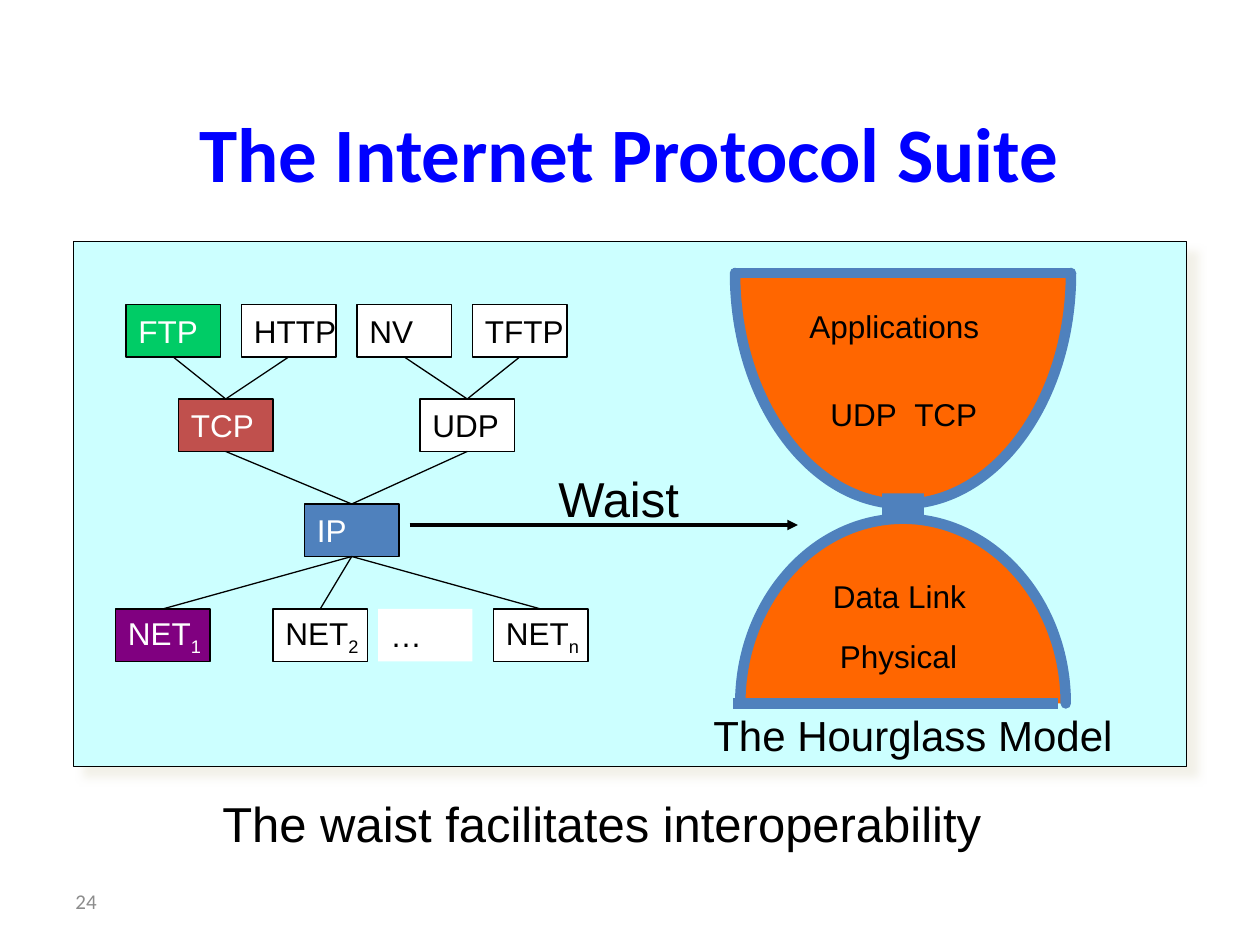
from copy import deepcopy
from dataclasses import dataclass

from lxml.etree import SubElement
from pptx import Presentation
from pptx.dml.color import RGBColor
from pptx.enum.shapes import MSO_CONNECTOR as Link, MSO_SHAPE as Shape
from pptx.enum.text import MSO_ANCHOR as Anchor, MSO_AUTO_SIZE as AutoSize, PP_ALIGN as Align
from pptx.oxml.ns import qn
from pptx.util import Inches, Pt


@dataclass(frozen=True)
class Theme:
    ink: str = "000000"
    paper: str = "FFFFFF"
    title: str = "0000FF"
    muted: str = "8C8C8C"
    panel: str = "CCFFFF"
    shade: str = "EEECE1"
    blue: str = "4F81BD"
    orange: str = "FF6600"
    green: str = "00CC66"
    red: str = "C0504D"
    purple: str = "800080"
    heading_font: str = "Calibri"
    body_font: str = "Arial"
    title_size: int = 44
    large: int = 28
    medium: int = 24
    body: int = 18
    small: int = 12
    thin: float = 0.75
    arrow: float = 2
    glass: float = 6


COLUMNS, ROWS = 120, 90
BOX_WIDTH, BOX_HEIGHT = 9, 5
ROUND = 0.55  # share of the radius at which a curve's handles sit


def write(frame, text, subscript="", font=Theme.body_font, size=Theme.body, color=Theme.ink,
          bold=False, align=Align.LEFT, anchor=Anchor.TOP, wrap=False, fit=AutoSize.NONE):
    frame.auto_size, frame.word_wrap, frame.vertical_anchor = fit, wrap, anchor
    paragraph = frame.paragraphs[0]
    paragraph.alignment = align
    for part in filter(None, (text, subscript)):
        run = paragraph.add_run()
        run.text = part
        run.font.name, run.font.size, run.font.bold = font, Pt(size), bold
        run.font.color.rgb = RGBColor.from_string(color)
    if subscript:
        run._r.get_or_add_rPr().set("baseline", "-25000")


class Diagram:
    """Draws on one slide; all lengths are columns and rows of its grid."""

    def __init__(self, deck, theme):
        self.theme = theme
        self.slide = deck.slides.add_slide(deck.slide_layouts[5])
        self.shapes = self.slide.shapes
        self.column = deck.slide_width / COLUMNS
        self.row = deck.slide_height / ROWS

    def place(self, *lengths):
        """Turn alternating columns and rows into slide lengths."""
        return [round(n * (self.row if i % 2 else self.column)) for i, n in enumerate(lengths)]

    def paint(self, shape, fill, line=None, width=None):
        shape.shadow.inherit = False
        shape.fill.solid()
        shape.fill.fore_color.rgb = RGBColor.from_string(fill)
        if line:
            shape.line.color.rgb = RGBColor.from_string(line)
            shape.line.width = Pt(width or self.theme.thin)
        else:
            shape.line.fill.background()

    def title(self, text, *area):
        heading = self.shapes.title
        heading.left, heading.top, heading.width, heading.height = self.place(*area)
        write(heading.text_frame, text, font=self.theme.heading_font,
              size=self.theme.title_size, color=self.theme.title, bold=True,
              align=Align.CENTER, anchor=Anchor.BOTTOM, wrap=True)

    def rectangle(self, *area, fill, line=None):
        block = self.shapes.add_shape(Shape.RECTANGLE, *self.place(*area))
        self.paint(block, fill, line)
        return block

    def panel(self, *area):
        block = self.rectangle(*area, fill=self.theme.panel, line=self.theme.ink)
        effects = block._element.spPr.find(qn("a:effectLst"))
        shadow = SubElement(effects, qn("a:outerShdw"), blurRad=str(Pt(5)),
                            dist=str(Pt(8.5)), dir="2700000", algn="ctr", rotWithShape="0")
        color = SubElement(shadow, qn("a:srgbClr"), val=self.theme.shade)
        SubElement(color, qn("a:alpha"), val="75000")

    def protocol(self, left, top, name, subscript="", fill=None, line=True):
        block = self.rectangle(left, top, BOX_WIDTH, BOX_HEIGHT, fill=fill or self.theme.paper,
                               line=self.theme.ink if line else None)
        write(block.text_frame, name, subscript, anchor=Anchor.MIDDLE,
              color=self.theme.paper if fill else self.theme.ink)
        return block

    def label(self, text, *area, **style):
        box = self.shapes.add_textbox(*self.place(*area))
        write(box.text_frame, text, **style)

    def line(self, *ends, color, width, arrow=False):
        stroke = self.shapes.add_connector(Link.STRAIGHT, *self.place(*ends))
        stroke.line.color.rgb = RGBColor.from_string(color)
        stroke.line.width = Pt(width)
        if arrow:
            SubElement(stroke.line._get_or_add_ln(), qn("a:tailEnd"), type="triangle")
        SubElement(stroke._element.spPr, qn("a:effectLst"))
        return stroke

    def link(self, upper, lower):
        """Join the bottom of one box to the top of another."""
        stroke = self.line(0, 0, 0, 0, color=self.theme.ink, width=self.theme.thin)
        stroke.begin_connect(upper, 2)
        stroke.end_connect(lower, 0)

    def quarter(self, x, y, reach, rise):
        """Fill a quarter ellipse around (x, y) and outline only its curve."""
        corners = [self.place(x + reach * across, y + rise * along)
                   for across, along in ((1, 0), (1, ROUND), (ROUND, 1), (0, 1), (0, 0))]
        builder = self.shapes.build_freeform(*corners[0])
        builder.add_line_segments(corners[1:], close=True)
        wedge = builder.convert_to_shape()
        self.paint(wedge, self.theme.orange, self.theme.blue, self.theme.glass)
        wedge.line._get_or_add_ln().set("cap", "rnd")

        area = next(wedge._element.iter(qn("a:path")))
        start, *handles = area[:4]
        curve = SubElement(area, qn("a:cubicBezTo"))
        for step in handles:
            curve.append(step[0])
            area.remove(step)
        start.addnext(curve)
        rim = deepcopy(area)
        for edge in rim[2:]:
            rim.remove(edge)
        area.set("stroke", "0")
        rim.set("fill", "none")
        area.addprevious(rim)


def draw_hourglass(page):
    theme = page.theme
    middle, top, bottom = 86, 26, 67
    for side in (1, -1):
        page.quarter(middle, bottom, side * 15.5, -17.6)
    for side in (1, -1):
        page.quarter(middle, top, side * 16, 22)
    for right, level in ((101.9, top), (100.8, bottom)):
        page.line(69.8, level, right, level, color=theme.blue, width=theme.glass)
    page.rectangle(84, 47, 4, 2.9, fill=theme.blue)
    for name, left, row, width in (("UDP", 77.9, 37, 8.8), ("TCP", 85.9, 37, 8.4),
                                   ("Data Link", 78.15, 54.4, 15.8),
                                   ("Physical", 78.8, 60.1, 14.5),
                                   ("Applications", 75.9, 28.65, 20.4)):
        page.label(name, left, row, width, 4.8, fit=AutoSize.SHAPE_TO_FIT_TEXT)
    page.label("The Hourglass Model", 66.75, 67, 42.8, 6, size=theme.medium,
               fit=AutoSize.SHAPE_TO_FIT_TEXT)


def draw_protocols(page):
    theme = page.theme
    ftp, http, nv, tftp = [
        page.protocol(12 + 11 * i, 29, name, fill=fill)
        for i, (name, fill) in enumerate((("FTP", theme.green), ("HTTP", None),
                                          ("NV", None), ("TFTP", None)))]
    tcp = page.protocol(17, 38, "TCP", fill=theme.red)
    udp = page.protocol(40, 38, "UDP")
    ip = page.protocol(29, 48, "IP", fill=theme.blue)
    networks = [page.protocol(left, 58, "NET", index, fill)
                for left, index, fill in ((11, "1", theme.purple), (26, "2", None),
                                          (47, "n", None))]
    page.protocol(36, 58, "…", line=False)
    for upper, lower in ((ftp, tcp), (http, tcp), (nv, udp), (tftp, udp), (tcp, ip), (udp, ip),
                         *((ip, network) for network in networks)):
        page.link(upper, lower)


def main():
    deck = Presentation()
    deck.slide_width, deck.slide_height = Inches(10), Inches(7.5)
    theme = Theme()
    page = Diagram(deck, theme)
    page.title("The Internet Protocol Suite", 11.04, 4.45, 97.8, 15)
    page.panel(7, 23, 106, 50)
    page.line(39, 50, 76, 50, color=theme.ink, width=theme.arrow, arrow=True)
    draw_hourglass(page)
    for text, left, top, width in (("Waist", 52, 44, 21),
                                   ("The waist facilitates interoperability", 20, 75, 79)):
        page.label(text, left, top, width, 6.8, size=theme.large, wrap=True,
                   fit=AutoSize.SHAPE_TO_FIT_TEXT)
    draw_protocols(page)
    page.label("24", 6, 83.4, 28, 4.8, font=theme.heading_font, size=theme.small,
               color=theme.muted, anchor=Anchor.MIDDLE, wrap=True)
    deck.save("out.pptx")


if __name__ == "__main__":
    main()
